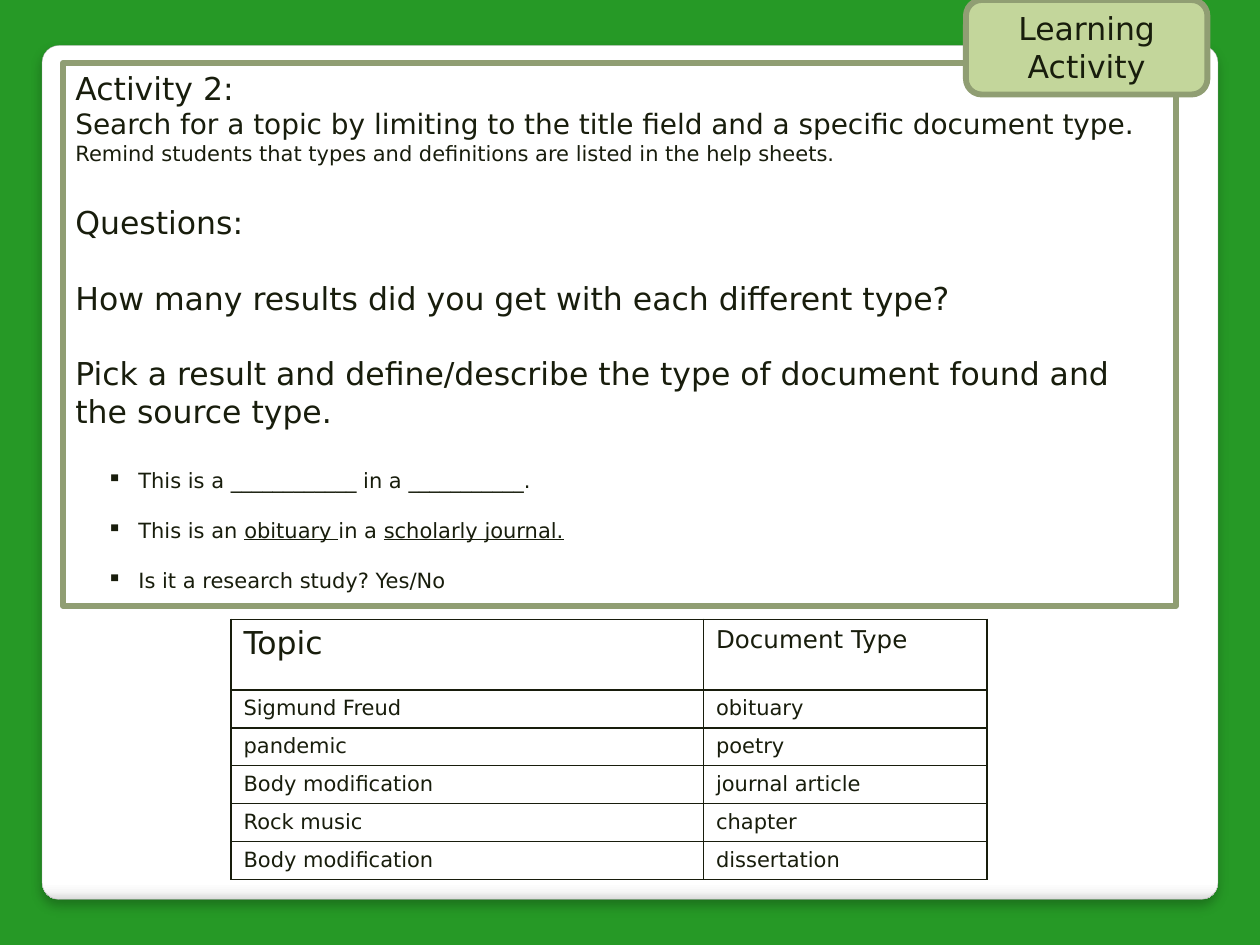
"""Build the Learning Activity slide about searching by title and document type."""
from lxml import etree
from pptx import Presentation
from pptx.dml.color import RGBColor
from pptx.enum.shapes import MSO_SHAPE as Shape
from pptx.enum.text import MSO_ANCHOR as Anchor, MSO_AUTO_SIZE as AutoSize, PP_ALIGN as Align
from pptx.oxml import parse_xml
from pptx.oxml.ns import nsdecls, qn
from pptx.util import Pt

INK, OLIVE = "181D0C", "909E73"


def rgb(value):
    return RGBColor.from_string(value)


def add_text(paragraph, text, size, underline=None):
    run = paragraph.add_run()
    run.text = text
    run.font.name = "DejaVu Sans"
    run.font.size = Pt(size)
    run.font.color.rgb = rgb(INK)
    run.font.underline = underline


deck = Presentation()
deck.slide_width, deck.slide_height = Pt(720), Pt(540)
slide = deck.slides.add_slide(deck.slide_layouts[6])
slide.background.fill.solid()
slide.background.fill.fore_color.rgb = rgb("269926")

card = slide.shapes.add_shape(Shape.ROUNDED_RECTANGLE, Pt(24), Pt(26), Pt(672), Pt(488))
card.adjustments[0] = 0.02
card.line.color.rgb = rgb("A4A4A4")
card.line.width = Pt(0.16)
stops = "".join(
    f'<a:gs pos="{percent * 1000}"><a:srgbClr val="{shade}"/></a:gs>'
    for percent, shade in [(0, "FFFFFF"), (98, "FFFFFF"), (99, "F7F7F7"), (100, "DADADA")]
)
card_style = card.line._get_or_add_ln()
card_style.addprevious(parse_xml(
    f'<a:gradFill {nsdecls("a")}><a:gsLst>{stops}</a:gsLst><a:lin ang="5400000"/></a:gradFill>'
))
card_style.addnext(parse_xml(
    f'<a:effectLst {nsdecls("a")}><a:outerShdw blurRad="{Pt(6)}" dist="{Pt(4)}" dir="5400000" rotWithShape="0">'
    '<a:srgbClr val="000000"><a:alpha val="25000"/></a:srgbClr></a:outerShdw></a:effectLst>'
))

activity = slide.shapes.add_shape(Shape.RECTANGLE, Pt(36), Pt(36), Pt(636), Pt(310.3))
activity.shadow.inherit = False
activity.fill.background()
activity.line.color.rgb = rgb(OLIVE)
activity.line.width = Pt(3.35)
activity_frame = activity.text_frame
activity_frame.word_wrap = True
activity_frame.auto_size = AutoSize.SHAPE_TO_FIT_TEXT
activity_frame.vertical_anchor = Anchor.TOP

instructions = [
    ("Activity 2:", 18, 0),
    ("Search for a topic by limiting to the title field and a specific document type.", 16, 0),
    ("Remind students that types and definitions are listed in the help sheets.", 12, 0),
    ("Questions:", 18, 21.5),
    ("How many results did you get with each different type?", 18, 21.5),
    ("Pick a result and define/describe the type of document found and the source type.", 18, 21.5),
]
answers = [
    ([("This is a ____________ in a ___________.", None)], 21.5),
    ([("This is an ", None), ("obituary ", True), ("in a ", None), ("scholarly journal.", True)], 14.3),
    ([("Is it a research study? Yes/No", None)], 14.3),
]
paragraph = activity_frame.paragraphs[0]
for position, (text, size, gap) in enumerate(instructions):
    if position:
        paragraph = activity_frame.add_paragraph()
    paragraph.alignment = Align.LEFT
    paragraph.space_before = Pt(gap)
    add_text(paragraph, text, size)
for pieces, gap in answers:
    paragraph = activity_frame.add_paragraph()
    paragraph.alignment = Align.LEFT
    paragraph.level = 1
    paragraph.space_before = Pt(gap)
    properties = paragraph._p.get_or_add_pPr()
    properties.set("marL", str(Pt(36)))
    properties.set("indent", str(Pt(-18)))
    etree.SubElement(properties, qn("a:buChar"), char="▪")
    for text, underline in pieces:
        add_text(paragraph, text, 12, underline)

tag = slide.shapes.add_shape(Shape.ROUNDED_RECTANGLE, Pt(552), Pt(0), Pt(138), Pt(54))
tag.shadow.inherit = False
tag.fill.solid()
tag.fill.fore_color.rgb = rgb("C3D69B")
tag.line.color.rgb = rgb(OLIVE)
tag.line.width = Pt(3.35)
tag.text_frame.word_wrap = True
tag.text_frame.vertical_anchor = Anchor.MIDDLE
tag.text_frame.paragraphs[0].alignment = Align.CENTER
add_text(tag.text_frame.paragraphs[0], "Learning Activity", 18)

topics = [
    ("Topic", "Document Type"),
    ("Sigmund Freud", "obituary"),
    ("pandemic", "poetry"),
    ("Body modification", "journal article"),
    ("Rock music", "chapter"),
    ("Body modification", "dissertation"),
]
topic_table = slide.shapes.add_table(len(topics), 2, Pt(132), Pt(354), Pt(432), Pt(148.7)).table
topic_table.first_row = topic_table.horz_banding = False
topic_table.columns[0].width, topic_table.columns[1].width = Pt(270), Pt(162)
for row, entries in enumerate(topics):
    topic_table.rows[row].height = Pt(21.7 if row else 40.2)
    for column, text in enumerate(entries):
        cell = topic_table.cell(row, column)
        cell.fill.background()
        add_text(cell.text_frame.paragraphs[0], text, 12 if row else (18, 14)[column])
        for order, side in enumerate(["lnL", "lnR", "lnT", "lnB"]):
            cell._tc.get_or_add_tcPr().insert(order, parse_xml(
                f'<a:{side} {nsdecls("a")} w="{Pt(1)}"><a:solidFill><a:srgbClr val="{INK}"/></a:solidFill></a:{side}>'
            ))

deck.save("out.pptx")
